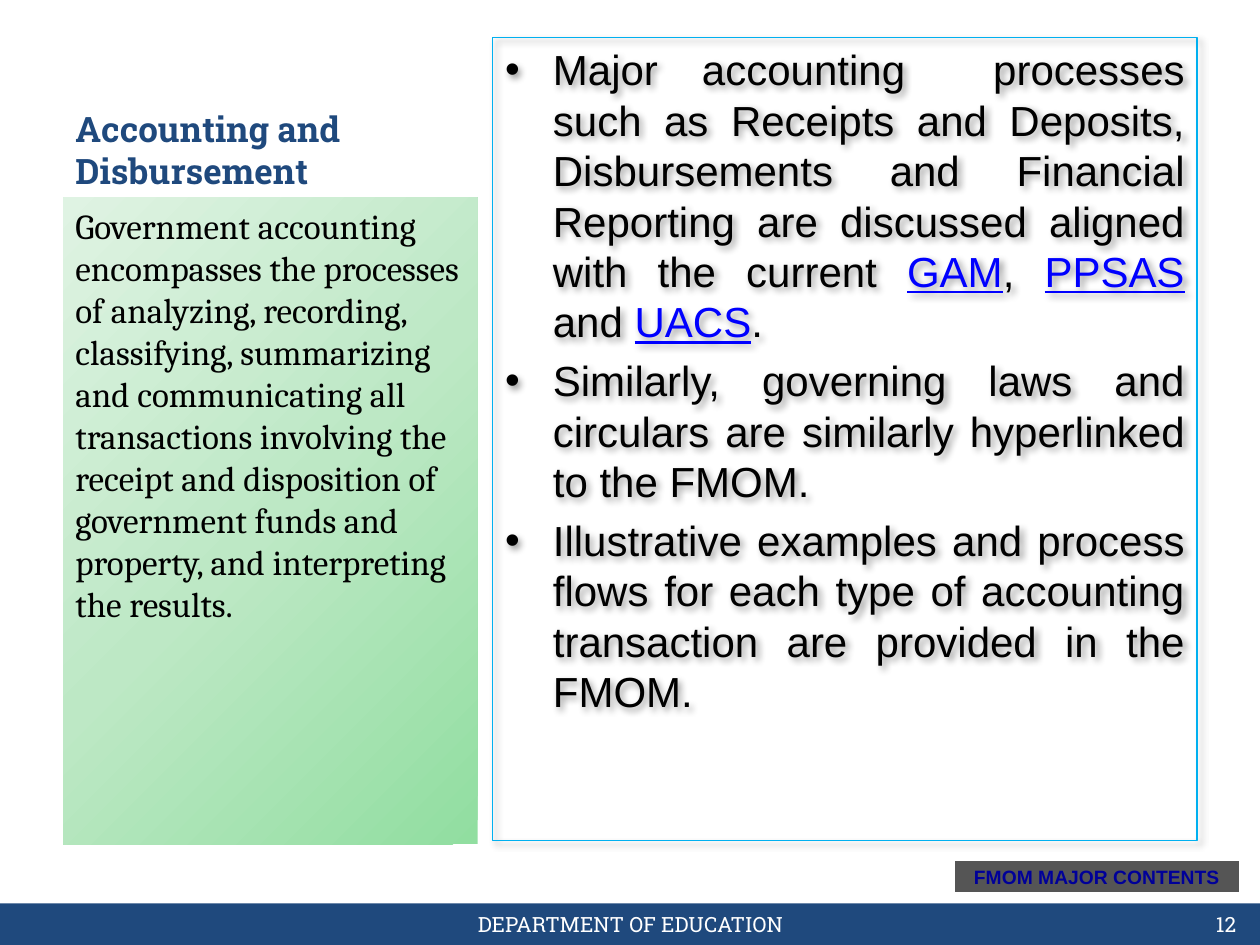
"""Build the slide on accounting and disbursement."""
from lxml import etree
from pptx import Presentation, util as u
from pptx.dml.color import RGBColor
from pptx.enum import shapes, text
from pptx.oxml import ns

THEME = {
    "navy": "1F497D", "white": "FFFFFF", "black": "000000", "link": "0000FF",
    "edge": "00B0F0", "grey": "555555", "label": "000099",
    "fade": [(0, "91DEA0"), (50, "BDE8C5"), (100, "DFF3E3")],
    "slab": "Roboto Slab", "serif": "Cambria", "sans": "Arial",
    "main": 24, "head": 20, "foot": 12, "tag": 11,
}
ALIGN, ANCHOR = text.PP_ALIGN, text.MSO_ANCHOR


def hue(name):
    return RGBColor.from_string(THEME[name])


def place(kind, spot, paras, font, size, color, align=ALIGN.LEFT, anchor=ANCHOR.TOP, bold=False, gap=0):
    shape = slide.shapes.add_shape(kind, *[u.Inches(n) for n in spot])
    shape.shadow.inherit = False
    shape.fill.background()
    shape.line.fill.background()
    frame = shape.text_frame
    frame.word_wrap = True
    frame.vertical_anchor = anchor
    frame.text = "\n".join(paras)
    for para in frame.paragraphs:
        para.alignment = align
        para.space_before = u.Pt(THEME[size] * gap)
        para.line_spacing = u.Pt(THEME[size] * 1.2)
        for run in para.runs:
            run.font.name = THEME[font]
            run.font.size = u.Pt(THEME[size])
            run.font.bold = bold
            run.font.color.rgb = hue(color)
    return shape


deck = Presentation()
deck.slide_width, deck.slide_height = u.Inches(10), u.Inches(7.5)
slide = deck.slides.add_slide(deck.slide_layouts[6])
RECT = shapes.MSO_SHAPE.RECTANGLE

band = place(RECT, (0, 7.17, 10, 0.33), [], "slab", "foot", "white")
band.fill.solid()
band.fill.fore_color.rgb = hue("navy")
place(RECT, (3.42, 7.17, 3.17, 0.33), ["DEPARTMENT OF EDUCATION"], "slab", "foot", "white",
      ALIGN.CENTER, ANCHOR.MIDDLE)
place(RECT, (0.5, 0.3, 3.29, 1.27), ["Accounting and Disbursement"], "slab", "head", "navy",
      anchor=ANCHOR.BOTTOM, bold=True)

points = [
    "",
    "Similarly, governing laws and circulars are similarly hyperlinked to the FMOM.",
    "Illustrative examples and process flows for each type of accounting transaction "
    "are provided in the FMOM.",
]
terms = ["GAM", "PPSAS", "UACS"]
parts = [
    "Major accounting  processes such as Receipts and Deposits, Disbursements and "
    "Financial Reporting are discussed aligned with the current ",
    "GAM", ", ", "PPSAS", " and ", "UACS", ".",
]
body = place(RECT, (3.91, 0.3, 5.59, 6.37), points, "sans", "main", "black", ALIGN.JUSTIFY, gap=0.2)
body.line.color.rgb = hue("edge")
body.line.width = u.Pt(0.75)
for part in parts:
    run = body.text_frame.paragraphs[0].add_run()
    run.text = part
    run.font.name = THEME["sans"]
    run.font.size = u.Pt(THEME["main"])
    run.font.underline = part in terms
    run.font.color.rgb = hue("link" if part in terms else "black")
for para in body.text_frame.paragraphs:
    props = para._p.get_or_add_pPr()
    props.set("marL", str(u.Inches(0.38)))
    props.set("indent", str(-u.Inches(0.38)))
    etree.SubElement(props, ns.qn("a:buFont"), typeface=THEME["sans"])
    etree.SubElement(props, ns.qn("a:buChar"), char="•")
glow = body._element.spPr.find(ns.qn("a:effectLst"))
cast = etree.SubElement(glow, ns.qn("a:outerShdw"), blurRad=str(u.Pt(4)), dist=str(u.Pt(3)),
                        dir="2700000", algn="tl", rotWithShape="0")
tint = etree.SubElement(cast, ns.qn("a:srgbClr"), val=THEME["black"])
etree.SubElement(tint, ns.qn("a:alpha"), val="40000")

panel = place(RECT, (0.5, 1.57, 3.29, 5.13), [
    "Government accounting encompasses the processes of analyzing, recording, classifying, "
    "summarizing and communicating all transactions involving the receipt and disposition of "
    "government funds and property, and interpreting the results."
], "serif", "head", "black", gap=0.2)
panel.fill.gradient()
panel.fill.gradient_angle = 135
stops = panel._element.spPr.find(ns.qn("a:gradFill")).find(ns.qn("a:gsLst"))
for old in list(stops):
    stops.remove(old)
for spot, shade in THEME["fade"]:
    stop = etree.SubElement(stops, ns.qn("a:gs"), pos=str(spot * 1000))
    etree.SubElement(stop, ns.qn("a:srgbClr"), val=shade)

place(RECT, (7.58, 7.17, 2.33, 0.33), ["12"], "slab", "foot", "white", ALIGN.RIGHT, ANCHOR.MIDDLE)
tag = place(shapes.MSO_SHAPE.ACTION_BUTTON_CUSTOM, (7.58, 6.83, 2.25, 0.25), ["FMOM MAJOR CONTENTS"],
            "sans", "tag", "label", ALIGN.CENTER, ANCHOR.MIDDLE, True)
tag.fill.solid()
tag.fill.fore_color.rgb = hue("grey")

deck.save("out.pptx")
